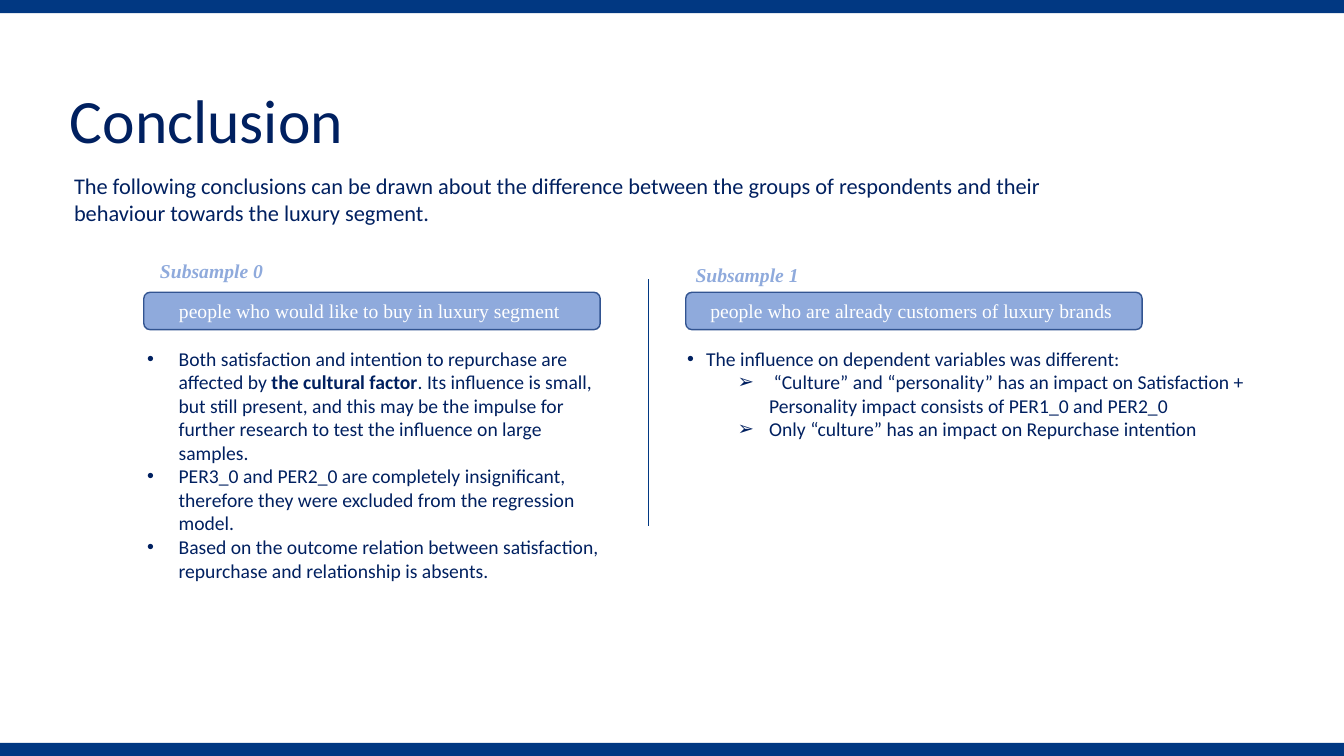
from lxml.etree import SubElement
from pptx import Presentation
from pptx.dml.color import RGBColor
from pptx.enum.shapes import MSO_CONNECTOR, MSO_SHAPE
from pptx.enum.text import MSO_ANCHOR, PP_ALIGN
from pptx.oxml.ns import qn
from pptx.util import Pt

NAVY = RGBColor(0x00, 0x20, 0x60)
BAND_BLUE = RGBColor(0x01, 0x38, 0x82)
PALE_BLUE = RGBColor(0x8F, 0xAA, 0xDC)
EDGE_BLUE = RGBColor(0x32, 0x54, 0x91)
WHITE = RGBColor(0xFF, 0xFF, 0xFF)

PAGE_WIDTH, PAGE_HEIGHT = 960, 540
BAND_HEIGHT = 9.4

TITLE = {"name": "Calibri", "size": Pt(44)}
INTRO = {"name": "Calibri", "size": Pt(16)}
BODY = {"name": "Calibri", "size": Pt(14)}
BODY_BOLD = {**BODY, "bold": True}
LABEL = {"name": "Times New Roman", "size": Pt(14)}
HEADING = {**LABEL, "bold": True, "italic": True}

# Each bullet: character, level, text indent, hanging width, spans
SUBSAMPLE_0_POINTS = [
    ("•", 0, 22.5, 22.5, [
        ("Both satisfaction and intention to repurchase are affected by ", BODY),
        ("the cultural factor", BODY_BOLD),
        (". Its influence is small, but still present, and this may be the impulse "
         "for further research to test the influence on large samples.", BODY)]),
    ("•", 0, 22.5, 22.5, [
        ("PER3_0 and PER2_0 are completely insignificant, therefore they were "
         "excluded from the regression model.", BODY)]),
    ("•", 0, 22.5, 22.5, [
        ("Based on the outcome relation between satisfaction, repurchase and "
         "relationship is absents.", BODY)]),
]
SUBSAMPLE_1_POINTS = [
    ("•", 0, 13.5, 13.5, [
        ("The influence on dependent variables was different:", BODY)]),
    ("➢", 1, 58.5, 22.5, [
        (" “Culture” and “personality” has an impact on Satisfaction + "
         "Personality impact consists of PER1_0 and PER2_0", BODY)]),
    ("➢", 1, 58.5, 22.5, [
        ("Only “culture” has an impact on Repurchase intention", BODY)]),
]


def add_span(para, text, style, color):
    span = para.add_run()
    span.text = text
    for name, value in style.items():
        setattr(span.font, name, value)
    span.font.color.rgb = color


def add_text_frame(page, left, top, width, height):
    box = page.shapes.add_textbox(Pt(left), Pt(top), Pt(width), Pt(height))
    box.text_frame.word_wrap = True
    return box.text_frame


def add_text(page, left, top, width, height, text, style, color):
    frame = add_text_frame(page, left, top, width, height)
    add_span(frame.paragraphs[0], text, style, color)
    return frame


def add_title(page, text):
    frame = add_text(page, 0, 23, 669.6, 60.5, text, TITLE, NAVY)
    for side in ("left", "top", "right", "bottom"):
        setattr(frame, f"margin_{side}", Pt(9.36))
    para = frame.paragraphs[0]
    para.alignment = PP_ALIGN.JUSTIFY
    para.line_spacing = 1.5
    para._p.get_or_add_pPr().set("marL", str(Pt(40.5)))


def add_bullets(page, left, top, width, height, points):
    frame = add_text_frame(page, left, top, width, height)
    for index, (character, level, indent, hanging, spans) in enumerate(points):
        para = frame.add_paragraph() if index else frame.paragraphs[0]
        para.level = level
        properties = para._p.get_or_add_pPr()
        properties.set("marL", str(Pt(indent)))
        properties.set("indent", str(-Pt(hanging)))
        SubElement(properties, qn("a:buFont"), typeface="Arial")
        SubElement(properties, qn("a:buChar"), char=character)
        for text, style in spans:
            add_span(para, text, style, NAVY)


def add_filled_shape(page, kind, left, top, width, height, fill):
    shape = page.shapes.add_shape(kind, Pt(left), Pt(top), Pt(width), Pt(height))
    shape.shadow.inherit = False
    shape.fill.solid()
    shape.fill.fore_color.rgb = fill
    shape.line.fill.background()
    return shape


def add_pill(page, left, text):
    pill = add_filled_shape(page, MSO_SHAPE.ROUNDED_RECTANGLE,
                            left, 208.8, 326, 26.7, PALE_BLUE)
    pill.line.color.rgb = EDGE_BLUE
    pill.line.width = Pt(1)
    frame = pill.text_frame
    frame.word_wrap = True
    frame.vertical_anchor = MSO_ANCHOR.MIDDLE
    para = frame.paragraphs[0]
    para.alignment = PP_ALIGN.CENTER
    add_span(para, text, LABEL, WHITE)


def add_divider(page, x, top, bottom):
    line = page.shapes.add_connector(MSO_CONNECTOR.STRAIGHT,
                                     Pt(x), Pt(top), Pt(x), Pt(bottom))
    line.line.color.rgb = BAND_BLUE
    line.line.width = Pt(0.5)
    SubElement(line._element.spPr, qn("a:effectLst"))


def main():
    deck = Presentation()
    deck.slide_width, deck.slide_height = Pt(PAGE_WIDTH), Pt(PAGE_HEIGHT)
    page = deck.slides.add_slide(deck.slide_layouts[6])

    add_title(page, "Conclusion")
    for top in (PAGE_HEIGHT - BAND_HEIGHT, 0):
        add_filled_shape(page, MSO_SHAPE.RECTANGLE,
                         0, top, PAGE_WIDTH, BAND_HEIGHT, BAND_BLUE)
    add_text(page, 45.8, 119.5, 745, 46,
             "The following conclusions can be drawn about the difference between the "
             "groups of respondents and their behaviour towards the luxury segment.",
             INTRO, NAVY)
    add_divider(page, 463.2, 199.4, 376)

    add_pill(page, 102.7, "people who would like to buy in luxury segment ")
    add_pill(page, 489.8, "people who are already customers of luxury brands ")
    add_text(page, 107.2, 181.4, 96.5, 24.3, "Subsample 0", HEADING, PALE_BLUE)
    add_text(page, 489.8, 184.3, 96.5, 24.3, "Subsample 1", HEADING, PALE_BLUE)
    add_bullets(page, 98, 244.1, 337.7, 177, SUBSAMPLE_0_POINTS)
    add_bullets(page, 483.8, 244.1, 430, 75, SUBSAMPLE_1_POINTS)

    deck.save("out.pptx")


if __name__ == "__main__":
    main()
